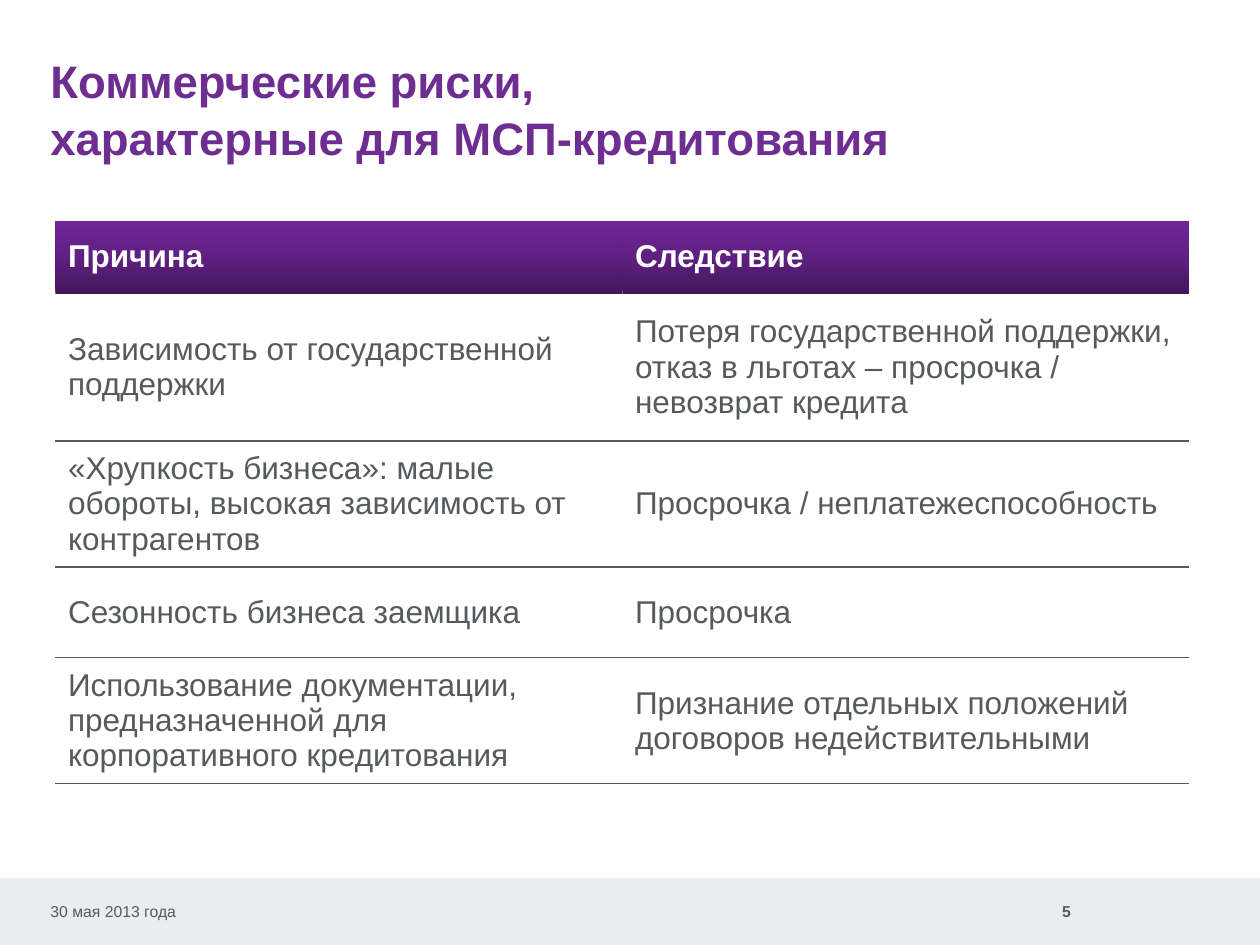
import pptx
import pptx.dml.color
import pptx.enum.shapes
import pptx.enum.text
import pptx.oxml
import pptx.oxml.ns
import pptx.util
from pptx.util import Inches

COLORS = {"purple": "6E2D91", "gray": "565A5C", "band": "EBECED", "white": "FFFFFF"}
HEADER_GRADIENT = [(0, "43165A"), (50, "5F2081"), (100, "702698")]
FONT = "Arial"

TITLE = "Коммерческие риски,\vхарактерные для МСП-кредитования"
DATE = "30 мая 2013 года"
PAGE_NUMBER = "5"
ROWS = [
    ("Причина", "Следствие"),
    ("Зависимость от государственной поддержки",
     "Потеря государственной поддержки, отказ в льготах – просрочка / невозврат кредита"),
    ("«Хрупкость бизнеса»: малые обороты, высокая зависимость от контрагентов",
     "Просрочка / неплатежеспособность"),
    ("Сезонность бизнеса заемщика", "Просрочка"),
    ("Использование документации, предназначенной для корпоративного кредитования",
     "Признание отдельных положений договоров недействительными"),
]
ROW_HEIGHTS = [0.58, 1.17, 0.94, 0.72, 0.94]
COLUMN_WIDTH = 4.5

MIDDLE = pptx.enum.text.MSO_ANCHOR.MIDDLE
NAMESPACE = pptx.oxml.ns.nsdecls("a")


def rgb(name):
    return pptx.dml.color.RGBColor.from_string(COLORS[name])


def format_text(text_frame, size, color, bold=False):
    for paragraph in text_frame.paragraphs:
        for run in paragraph.runs:
            run.font.name = FONT
            run.font.size = pptx.util.Pt(size)
            run.font.bold = bold
            run.font.color.rgb = rgb(color)


def add_text(slide, text, box, size, color, bold=False, wrap=True):
    text_frame = slide.shapes.add_textbox(*map(Inches, box)).text_frame
    text_frame.margin_left = text_frame.margin_right = 0
    text_frame.margin_top = text_frame.margin_bottom = 0
    text_frame.word_wrap = wrap
    text_frame.text = text
    format_text(text_frame, size, color, bold)
    return text_frame


def set_border(cell, side, visible):
    fill = (f'<a:solidFill><a:srgbClr val="{COLORS["gray"]}"/></a:solidFill>'
            if visible else "<a:noFill/>")
    cell._tc.get_or_add_tcPr().append(pptx.oxml.parse_xml(
        f'<a:ln{side} {NAMESPACE} w="{pptx.util.Pt(0.75)}">{fill}</a:ln{side}>'))


def fill_header(cell):
    stops = "".join(f'<a:gs pos="{position * 1000}"><a:srgbClr val="{color}"/></a:gs>'
                    for position, color in HEADER_GRADIENT)
    cell._tc.get_or_add_tcPr().append(pptx.oxml.parse_xml(
        f'<a:gradFill {NAMESPACE} rotWithShape="1"><a:gsLst>{stops}</a:gsLst>'
        '<a:lin ang="16200000" scaled="0"/></a:gradFill>'))


def add_risk_table(slide):
    column_count = len(ROWS[0])
    table = slide.shapes.add_table(
        len(ROWS), column_count, Inches(0.44), Inches(1.75),
        Inches(COLUMN_WIDTH * column_count), Inches(sum(ROW_HEIGHTS))).table
    table.horz_banding = False
    for column in table.columns:
        column.width = Inches(COLUMN_WIDTH)
    for row_index, (texts, height) in enumerate(zip(ROWS, ROW_HEIGHTS)):
        table.rows[row_index].height = Inches(height)
        is_header = row_index == 0
        borders = {"L": False, "R": False, "T": row_index > 1, "B": not is_header}
        for column_index, text in enumerate(texts):
            cell = table.cell(row_index, column_index)
            cell.text_frame.text = text
            cell.vertical_anchor = MIDDLE
            format_text(cell.text_frame, 18, "white" if is_header else "gray", is_header)
            for side, visible in borders.items():
                set_border(cell, side, visible)
            if is_header:
                fill_header(cell)
            else:
                cell.fill.background()


def main():
    presentation = pptx.Presentation()
    presentation.slide_width = Inches(10)
    presentation.slide_height = Inches(7.5)
    slide = presentation.slides.add_slide(presentation.slide_layouts[6])

    footer = slide.shapes.add_shape(
        pptx.enum.shapes.MSO_SHAPE.RECTANGLE,
        Inches(0), Inches(6.97), Inches(10), Inches(0.53))
    footer.shadow.inherit = False
    footer.fill.solid()
    footer.fill.fore_color.rgb = rgb("band")
    footer.line.fill.background()

    title = add_text(slide, TITLE, (0.4, 0.4, 9.2, 0.88), 26, "purple", bold=True)
    title.paragraphs[0].line_spacing = 1.05
    date = add_text(slide, DATE, (0.4, 7.16, 1.15, 0.15), 9, "gray")
    number = add_text(slide, PAGE_NUMBER, (8.35, 7.16, 0.15, 0.15), 9, "gray",
                      bold=True, wrap=False)
    number.paragraphs[0].alignment = pptx.enum.text.PP_ALIGN.RIGHT
    date.vertical_anchor = number.vertical_anchor = MIDDLE

    add_risk_table(slide)
    presentation.save("out.pptx")


if __name__ == "__main__":
    main()
